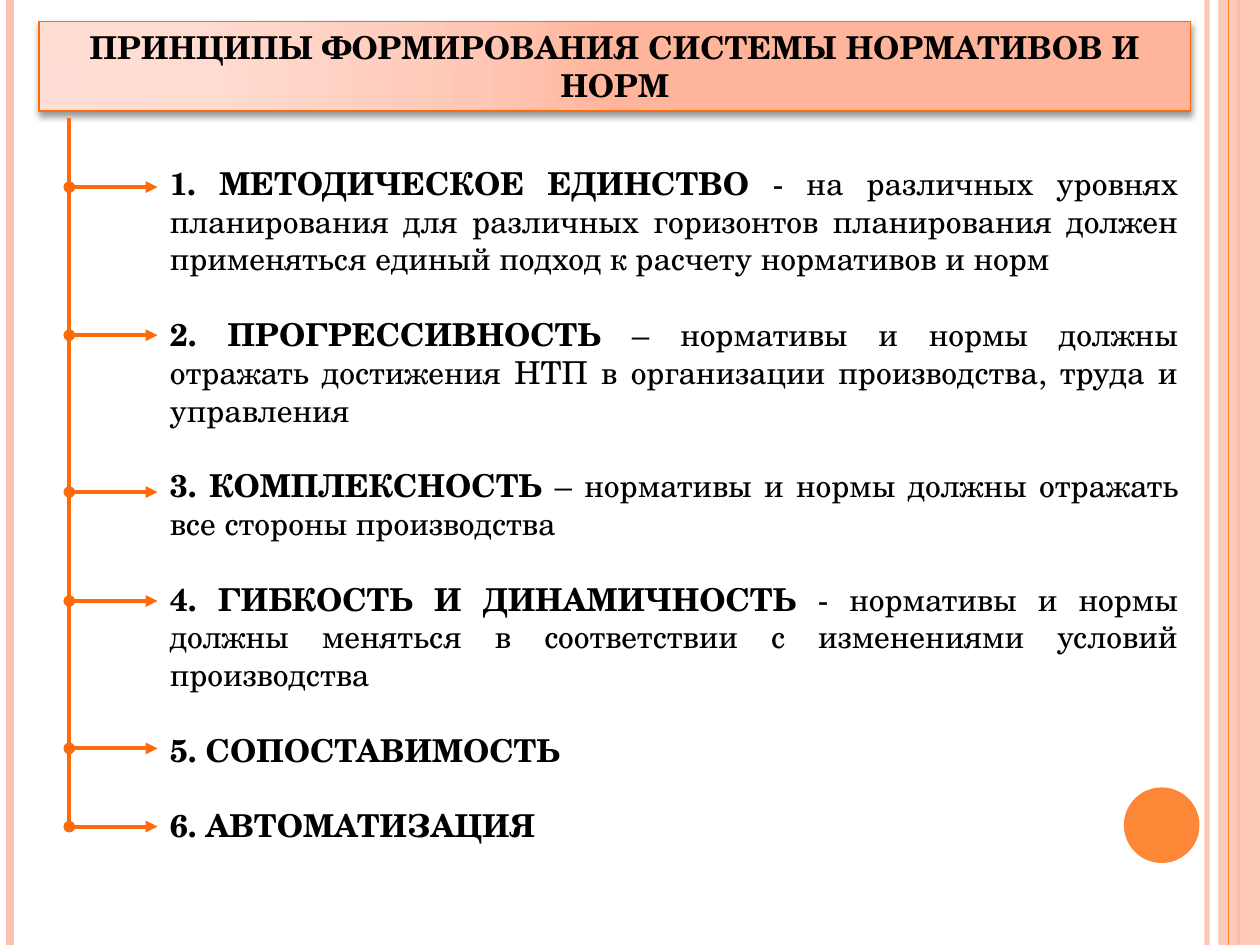
from lxml.etree import SubElement
from pptx import Presentation
from pptx.dml.color import RGBColor
from pptx.enum.shapes import MSO_CONNECTOR, MSO_SHAPE
from pptx.enum.text import MSO_ANCHOR, PP_ALIGN
from pptx.oxml.ns import qn
from pptx.util import Inches, Pt

FONT, SIZE = "TeX Gyre Schola", 18
HUES = {"peach": "FEC3AE", "orange": "FE8637", "edge": "FF6B0A", "ink": "000000"}
FADE = [(0, "FFDED5"), (30, "FFDBD0"), (75, "FFC8B6"), (100, "FFB59B")]
FOCUS = {"l": 5, "t": 100, "r": 120, "b": 10}
TITLE = "ПРИНЦИПЫ ФОРМИРОВАНИЯ СИСТЕМЫ НОРМАТИВОВ И НОРМ"
ITEMS = [
    (19.8, "1. МЕТОДИЧЕСКОЕ ЕДИНСТВО ",
     "- на различных уровнях планирования для различных горизонтов планирования "
     "должен применяться единый подход к расчету нормативов и норм"),
    (35.47, "2. ПРОГРЕССИВНОСТЬ ",
     "– нормативы и нормы должны отражать достижения НТП в организации "
     "производства, труда и управления"),
    (52.07, "3. КОМПЛЕКСНОСТЬ ",
     "– нормативы и нормы должны отражать все стороны производства"),
    (63.6, "4. ГИБКОСТЬ И ДИНАМИЧНОСТЬ ",
     "- нормативы и нормы должны меняться в соответствии с изменениями условий "
     "производства"),
    (79.2, "5. СОПОСТАВИМОСТЬ", ""),
    (87.47, "6. АВТОМАТИЗАЦИЯ", ""),
]
BARS = [(95.8, "peach", 3, 93), (0.8, "peach", 4.5, 100),
        (98.3, "orange", 1.5, 100)]
STEM, TEXT, TOP = 5.5, 12.5, 12.53

deck = Presentation()
deck.slide_width, deck.slide_height = Inches(10), Inches(7.5)
slide = deck.slides.add_slide(deck.slide_layouts[6])


def place(x, y):
    return int(deck.slide_width * x / 100), int(deck.slide_height * y / 100)


def rgb(hue):
    return RGBColor.from_string(HUES[hue])


def node(base, tag, **attrs):
    return SubElement(base, qn("a:" + tag), {k: str(v) for k, v in attrs.items()})


def thin(part, alpha):
    if alpha < 100:
        for tint in part.iter(qn("a:srgbClr")):
            node(tint, "alpha", val=alpha * 1000)


def draw(x1, y1, x2, y2, hue, width, alpha=100, arrow=False):
    line = slide.shapes.add_connector(
        MSO_CONNECTOR.STRAIGHT, *place(x1, y1), *place(x2, y2))
    line.line.color.rgb = rgb(hue)
    line.line.width = Pt(width)
    props = line._element.spPr
    thin(props, alpha)
    if arrow:
        edge = line.line._get_or_add_ln()
        node(edge, "headEnd", type="oval")
        node(edge, "tailEnd", type="triangle")
    node(props, "effectLst")


def shape(kind, x, y, w, h, hue, alpha=100):
    form = slide.shapes.add_shape(kind, *place(x, y), *place(w, h))
    form.shadow.inherit = False
    form.fill.solid()
    form.fill.fore_color.rgb = rgb(hue)
    form.line.fill.background()
    thin(form._element.spPr, alpha)
    return form


def write(para, words, bold):
    run = para.add_run()
    run.text = words
    run.font.name, run.font.size, run.font.bold = FONT, Pt(SIZE), bold
    run.font.color.rgb = rgb("ink")


def frame():
    for x, hue, width, alpha in BARS:
        draw(x, 0, x, 100, hue, width, alpha)
    shape(MSO_SHAPE.RECTANGLE, 96.7, 0, 3.3, 100, "peach", 87)
    draw(97.5, 0, 97.5, 100, "orange", 0.75)
    shape(MSO_SHAPE.OVAL, 89.2, 83.33, 6, 8, "orange")


def body():
    box = slide.shapes.add_textbox(*place(TEXT, 16.67), *place(82, 78.13))
    text = box.text_frame
    text.word_wrap = True
    for i, (_, name, rest) in enumerate(ITEMS):
        para = text.add_paragraph() if i else text.paragraphs[0]
        para.alignment = PP_ALIGN.JUSTIFY
        para.space_before = Pt(SIZE * 1.2 if i else 0)
        write(para, name, True)
        if rest:
            write(para, rest, False)


def title():
    head = shape(MSO_SHAPE.RECTANGLE, 3.1, 2.27, 91.4, 9.47, "peach")
    head.line.color.rgb = rgb("edge")
    head.line.width = Pt(1)
    props = head._element.spPr
    grad = node(props, "gradFill", rotWithShape=1)
    stops = node(grad, "gsLst")
    for pos, tint in FADE:
        node(node(stops, "gs", pos=pos * 1000), "srgbClr", val=tint)
    focus = {side: share * 1000 for side, share in FOCUS.items()}
    node(node(grad, "path", path="circle"), "fillToRect", **focus)
    props.replace(props.find(qn("a:solidFill")), grad)
    glow = node(props.find(qn("a:effectLst")), "outerShdw", blurRad=Pt(4),
                dist=Pt(2), dir=90 * 60000, rotWithShape=0)
    node(node(glow, "srgbClr", val=HUES["ink"]), "alpha", val=40000)
    text = head.text_frame
    text.word_wrap = True
    text.vertical_anchor = MSO_ANCHOR.MIDDLE
    text.paragraphs[0].alignment = PP_ALIGN.CENTER
    write(text.paragraphs[0], TITLE, True)


def tree():
    draw(STEM, TOP, STEM, ITEMS[-1][0], "edge", 2.25)
    for y, _, _ in ITEMS:
        draw(STEM, y, TEXT, y, "edge", 2.25, arrow=True)


frame()
body()
title()
tree()
deck.save("out.pptx")
